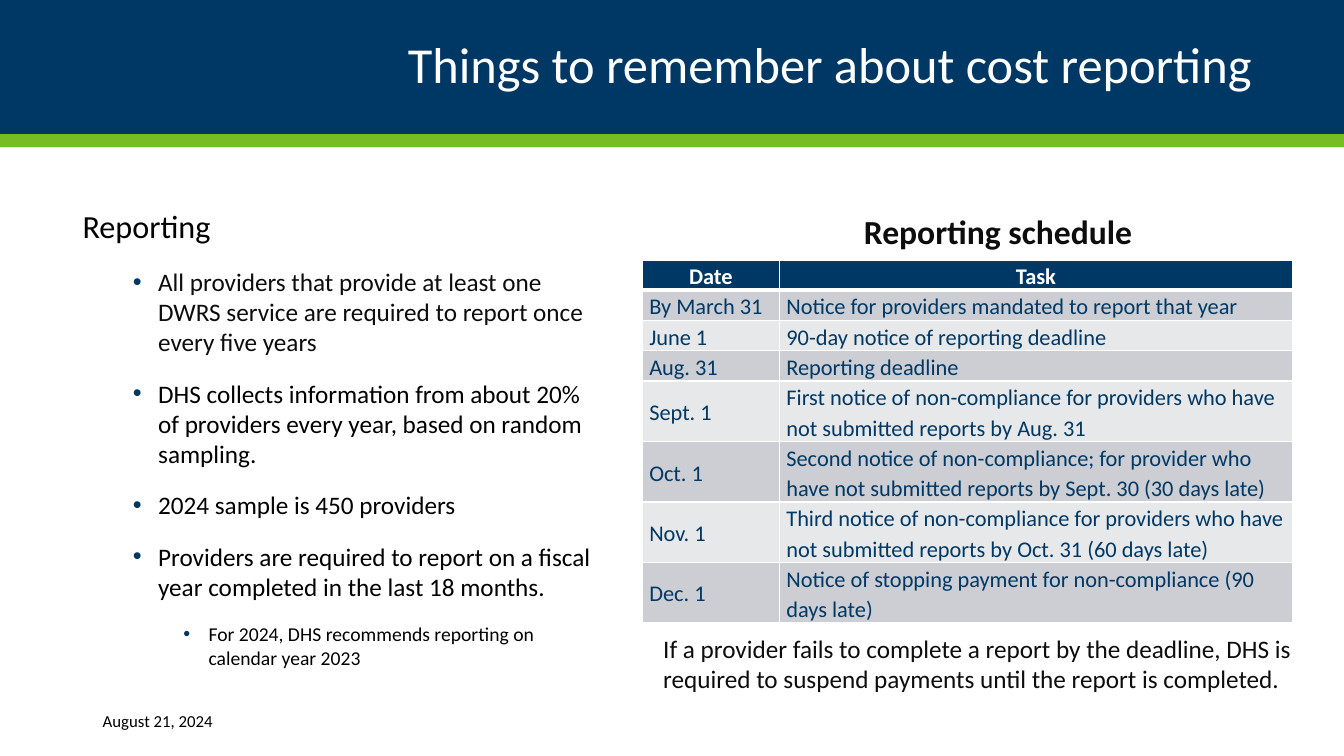
"""Build the cost reporting reminder slide with its schedule table."""
import pptx
import pptx.dml.color
import pptx.enum.shapes
import pptx.enum.text
import pptx.oxml
import pptx.oxml.ns
import pptx.util

FONT = "Calibri"
NAVY, GREEN, WHITE, BLACK, INK = "003865", "78BE21", "FFFFFF", "000000", "0D0D0D"
BANDS = ["CCCED3", "E7E8EA"]
COLUMNS, ROWS = 1333, 750
CELL = pptx.util.Inches(0.01)
ALIGN = pptx.enum.text.PP_ALIGN
MIDDLE = pptx.enum.text.MSO_ANCHOR.MIDDLE
NAMESPACE = pptx.oxml.ns.nsdecls("a")


def span(*counts):
    return [count * CELL for count in counts]


def style(paragraph, size, color, bold=False):
    paragraph.font.name = FONT
    paragraph.font.size = pptx.util.Pt(size)
    paragraph.font.bold = bold
    paragraph.font.color.rgb = pptx.dml.color.RGBColor.from_string(color)


presentation = pptx.Presentation()
presentation.slide_width, presentation.slide_height = span(COLUMNS, ROWS)
slide = presentation.slides.add_slide(presentation.slide_layouts.get_by_name("Title Only"))
shapes = slide.shapes

for top, height, color in [(0, 133, NAVY), (133, 13, GREEN)]:
    band = shapes.add_shape(
        pptx.enum.shapes.MSO_SHAPE.RECTANGLE, *span(0, top, COLUMNS, height))
    band.shadow.inherit = False
    band.fill.solid()
    band.fill.fore_color.rgb = pptx.dml.color.RGBColor.from_string(color)
    band.line.fill.background()

title = shapes.title
shapes._spTree.append(title._element)
title.left, title.top, title.width, title.height = span(92, 0, 1150, 133)
title.text_frame.text = "Things to remember about cost reporting"
title.text_frame.auto_size = pptx.enum.text.MSO_AUTO_SIZE.NONE
title.text_frame.vertical_anchor = MIDDLE
title.text_frame.margin_left = title.text_frame.margin_right = 0
heading = title.text_frame.paragraphs[0]
heading.alignment = ALIGN.RIGHT
heading.line_spacing = 0.9
style(heading, 36, WHITE)

reminders = [
    (0, "Reporting", 23, BLACK),
    (1, "All providers that provide at least one DWRS service are required to "
        "report once every five years", 18, INK),
    (1, "DHS collects information from about 20% of providers every year, based on "
        "random sampling.", 18, BLACK),
    (1, "2024 sample is 450 providers", 18, BLACK),
    (1, "Providers are required to report on a fiscal year completed in the last "
        "18 months.", 18, BLACK),
    (2, "For 2024, DHS recommends reporting on calendar year 2023", 14, BLACK),
]
body = shapes.add_textbox(*span(72, 200, 535, 495)).text_frame
body.word_wrap = True
for index, (level, text, size, color) in enumerate(reminders):
    paragraph = body.add_paragraph() if index else body.paragraphs[0]
    paragraph.text = text
    paragraph.level = level
    paragraph.space_after = pptx.util.Pt(10)
    if level:
        paragraph.space_before = pptx.util.Pt(5)
        properties = paragraph._p.get_or_add_pPr()
        properties.set("marL", str(pptx.util.Inches(0.25 + 0.5 * level)))
        properties.set("indent", str(pptx.util.Inches(-0.25)))
        for markup in (f'<a:buClr {NAMESPACE}><a:srgbClr val="{NAVY}"/></a:buClr>',
                       f'<a:buFont {NAMESPACE} typeface="Arial"/>',
                       f'<a:buChar {NAMESPACE} char="•"/>'):
            properties.append(pptx.oxml.parse_xml(markup))
    style(paragraph, size, color)

schedule = [
    ("Date", "Task", 1),
    ("By March 31", "Notice for providers mandated to report that year", 1),
    ("June 1", "90-day notice of reporting deadline", 1),
    ("Aug. 31", "Reporting deadline", 1),
    ("Sept. 1", "First notice of non-compliance for providers who have not submitted "
                "reports by Aug. 31", 2),
    ("Oct. 1", "Second notice of non-compliance; for provider who have not submitted "
               "reports by Sept. 30 (30 days late)", 2),
    ("Nov. 1", "Third notice of non-compliance for providers who have not submitted "
               "reports by Oct. 31 (60 days late)", 2),
    ("Dec. 1", "Notice of stopping payment for non-compliance (90 days late)", 2),
]
LINE_HEIGHT = 30
table_height = LINE_HEIGHT * sum(lines for *_, lines in schedule)
table = shapes.add_table(
    len(schedule), 2, *span(637, 258, 645, table_height)).table
table.columns[0].width, table.columns[1].width = span(136, 509)
for row, (date, task, lines) in enumerate(schedule):
    table.rows[row].height = lines * LINE_HEIGHT * CELL
    header = row == 0
    for column, text in enumerate((date, task)):
        cell = table.cell(row, column)
        cell.text = text
        cell.margin_left = cell.margin_right = pptx.util.Inches(0.07)
        cell.margin_top = cell.margin_bottom = 0
        if column == 0 and not header:
            cell.vertical_anchor = MIDDLE
        cell.fill.solid()
        cell.fill.fore_color.rgb = pptx.dml.color.RGBColor.from_string(
            NAVY if header else BANDS[(row - 1) % 2])
        paragraph = cell.text_frame.paragraphs[0]
        paragraph.alignment = ALIGN.CENTER if header else ALIGN.LEFT
        paragraph.line_spacing = 1.12
        style(paragraph, 16, WHITE if header else NAVY, header)
        for position, side in enumerate("LRTB"):
            thick = (row, side) in [(0, "B"), (1, "T")]
            width = pptx.util.Pt(3 if thick else 1)
            cell._tc.get_or_add_tcPr().insert(position, pptx.oxml.parse_xml(
                f'<a:ln{side} {NAMESPACE} w="{width}"><a:solidFill>'
                f'<a:srgbClr val="{WHITE}"/></a:solidFill></a:ln{side}>'))

labels = [
    ("Reporting schedule", (847, 204, 310, 81), 24, INK, True, None),
    ("August 21, 2024", (92, 695, 149, 40), 12, BLACK, False, MIDDLE),
    ("If a provider fails to complete a report by the deadline, DHS is required to "
     "suspend payments until the report is completed.",
     (648, 623, 667, 71), 18, INK, False, None),
]
for text, area, size, color, bold, anchor in labels:
    frame = shapes.add_textbox(*span(*area)).text_frame
    frame.word_wrap = True
    frame.vertical_anchor = anchor
    frame.text = text
    style(frame.paragraphs[0], size, color, bold)

presentation.save("out.pptx")
